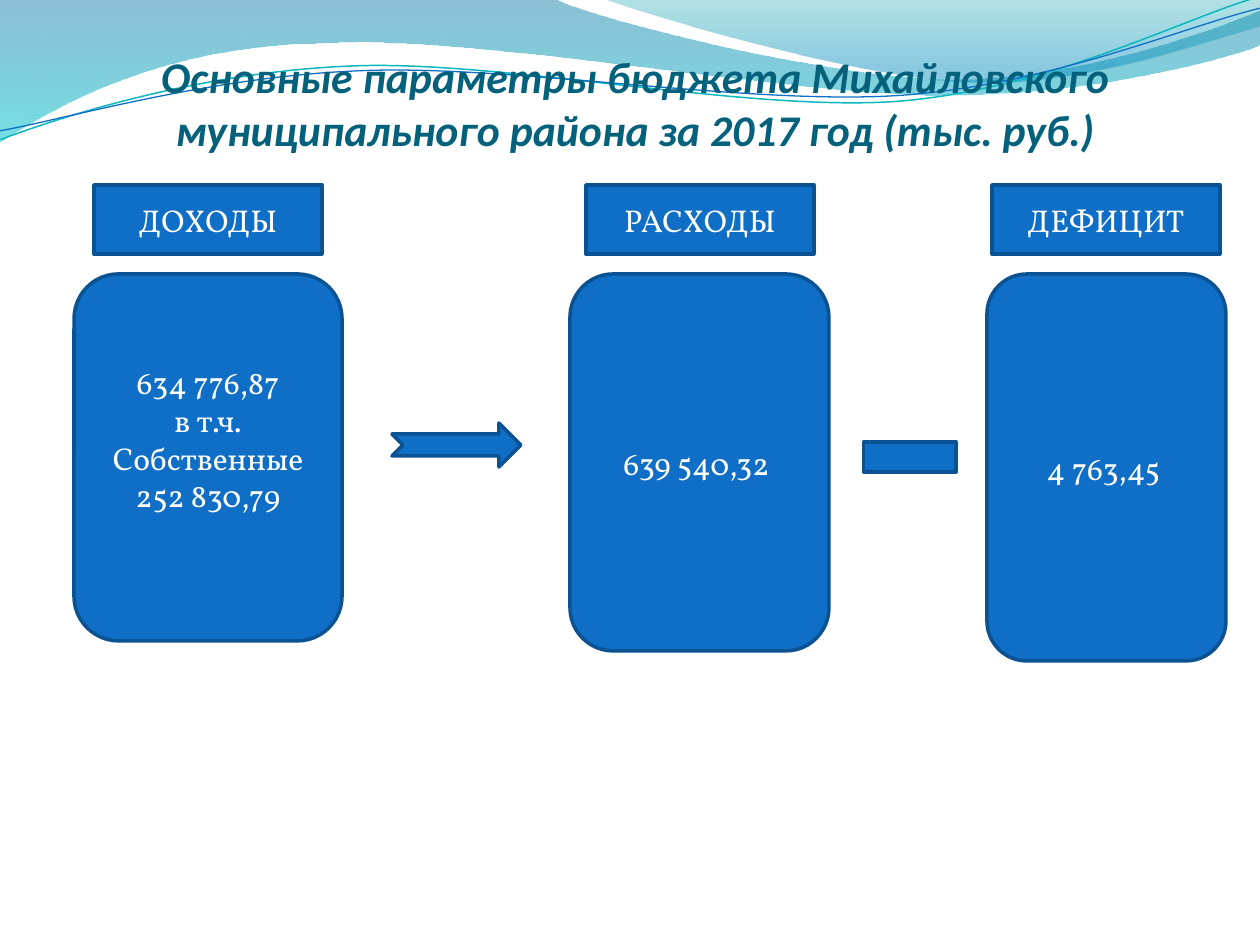
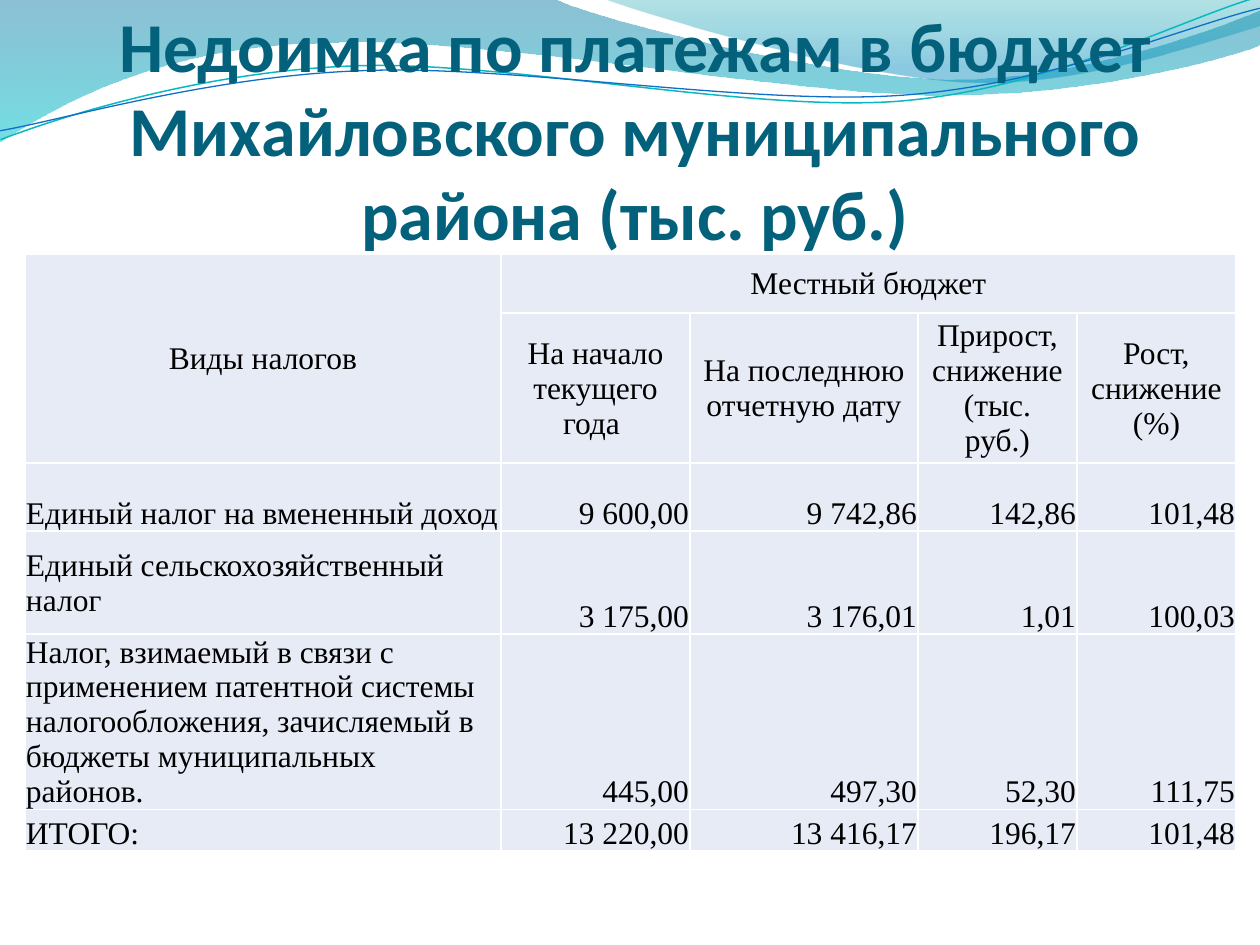
from lxml.etree import SubElement
from pptx import Presentation
from pptx.dml.color import RGBColor
from pptx.enum.shapes import MSO_SHAPE as Shape
from pptx.enum.text import MSO_ANCHOR as Anchor, MSO_AUTO_SIZE as AutoSize, PP_ALIGN as Align
from pptx.oxml import parse_xml
from pptx.oxml.ns import nsdecls, qn
from pptx.util import Inches, Pt

SCALE = Inches(1) / 126

BLUE = RGBColor(0x0F, 0x6F, 0xC6)
DARK_BLUE = RGBColor(0x0B, 0x52, 0x92)
TITLE_TEAL = RGBColor(0x04, 0x61, 0x7B)
TURQUOISE = RGBColor(0x0A, 0xB8, 0xBF)
CELL_FILL = RGBColor(0xE7, 0xEB, 0xF5)
WHITE = RGBColor(0xFF, 0xFF, 0xFF)
BLACK = RGBColor(0, 0, 0)

TITLE_FONT = "Calibri"
BODY_FONT = "Vollkorn"
TABLE_FONT = "Times New Roman"

# Pairs are straight steps, sixes are cubic curves: two control points and an end.
BANDS = [
    # outline, gradient stops (position, colour, opacity in percent)
    ([(0, 0), (554, -1), (600, 21, 837, 79, 955, 79), (1075, 79, 1207, 33, 1260, 11),
      (1261, 45), (1239, 55, 1096, 96, 940, 95), (784, 95, 481, 35, 324, 43),
      (163, 45, 58, 105, -1, 142)],
     [(0, RGBColor(0x00, 0x74, 0xA1), 45), (1, RGBColor(0x00, 0xC6, 0xCF), 55)]),
    ([(604, -1), (641, 14, 859, 78, 969, 82), (1079, 87, 1211, 40, 1260, 26), (1260, 0)],
     [(0, RGBColor(0x00, 0xA1, 0xA9), 30), (0.8, RGBColor(0x00, 0x8B, 0xBF), 45)]),
]
WAVE_ROTATION = 357.3
WAVE_LINES = [
    ([(-2, 110), (59, 90, 200, 52, 350, 53), (499, 53, 745, 118, 896, 114),
      (1049, 109, 1184, 45, 1260, 27)], TURQUOISE, 0.85),
    ([(-2, 101), (57, 94, 207, 57, 358, 58), (509, 58, 750, 112, 902, 108),
      (1052, 104, 1188, 52, 1262, 38)], BLUE, 0.75),
]

# heading, heading box, amount, amount box, space kept free under the amount
BUDGET_PARTS = [
    ("ДОХОДЫ", (94, 185, 228, 69), "634 776,87\nв т.ч. Собственные\n252 830,79",
     (74, 274, 268, 367), 44),
    ("РАСХОДЫ", (586, 185, 228, 69), "639 540,32 ", (570, 274, 259, 377), 6),
    ("ДЕФИЦИТ", (992, 185, 228, 69), "4 763,45 ", (987, 274, 239, 387), 6),
]

TABLE_HEIGHT = 614
COLUMN_WIDTHS = [476, 189, 228, 159, 159]
ROW_HEIGHTS = [59, 150, 68, 103, 68, 42]
COLUMN_HEADINGS = ["На начало текущего года ", "На последнюю отчетную дату",
                   "Прирост, снижение (тыс.\vруб.)", "Рост, снижение (%)"]
ARREARS = [
    # tax, its anchor, amounts
    ("Единый налог на вмененный доход", Anchor.BOTTOM,
     ("9 600,00", "9 742,86", "142,86", "101,48")),
    ("Единый сельскохозяйственный налог", Anchor.MIDDLE,
     ("3 175,00", "3 176,01", "1,01", "100,03")),
    ("Налог, взимаемый в связи с применением патентной системы налогообложения, "
     "зачисляемый в бюджеты муниципальных районов.", Anchor.MIDDLE,
     ("445,00", "497,30", "52,30", "111,75")),
    ("ИТОГО:", Anchor.BOTTOM, ("13 220,00", "13 416,17", "196,17", "101,48")),
]


def px(length):
    return round(length * SCALE)


def write_text(frame, text, *, size=18, font=BODY_FONT, color=WHITE, bold=False,
               italic=False, align=Align.CENTER, anchor=Anchor.MIDDLE):
    """Fill a frame with one paragraph per line of the text."""
    frame.word_wrap = True
    frame.vertical_anchor = anchor
    frame.text = text
    for paragraph in frame.paragraphs:
        paragraph.alignment = align
        for run in paragraph.runs:
            run.font.name = font
            run.font.size = Pt(size)
            run.font.bold = bold
            run.font.italic = italic
            run.font.color.rgb = color


def add_curve(slide, outline, close):
    """Draw the end points as a freeform, then bend its curved segments."""
    start, *segments = outline
    builder = slide.shapes.build_freeform(px(start[0]), px(start[1]))
    builder.add_line_segments([(px(s[-2]), px(s[-1])) for s in segments], close=close)
    shape = builder.convert_to_shape()
    shape.shadow.inherit = False
    steps = list(shape.element.iter(qn("a:lnTo")))
    for step, segment in zip(steps, segments):
        if len(segment) == 6:
            curve = parse_xml(f'<a:cubicBezTo {nsdecls("a")}/>')
            for x, y in zip(segment[::2], segment[1::2]):
                SubElement(curve, qn("a:pt"), x=str(px(x) - shape.left),
                           y=str(px(y) - shape.top))
            step.getparent().replace(step, curve)
    return shape


def add_band(slide, outline, stops):
    band = add_curve(slide, outline, close=True)
    band.line.fill.background()
    band.fill.gradient()
    band.fill.gradient_angle = 270
    for stop, (position, color, _) in zip(band.fill.gradient_stops, stops):
        stop.position = position
        stop.color.rgb = color
    for element, (_, _, opacity) in zip(band.element.iter(qn("a:srgbClr")), stops):
        SubElement(element, qn("a:alpha"), val=str(opacity * 1000))
    return band


def add_wave_line(slide, outline, color, width):
    line = add_curve(slide, outline, close=False)
    line.rotation = WAVE_ROTATION
    line.fill.background()
    line.line.color.rgb = color
    line.line.width = Pt(width)
    return line


def move_waves_to_layout(slide):
    """Draw the waves on a slide and hand them to its layout, behind the title."""
    waves = [add_band(slide, *band) for band in BANDS]
    waves += [add_wave_line(slide, *line) for line in WAVE_LINES]
    layout_title = slide.slide_layout.placeholders[0].element
    for number, wave in enumerate(waves, 20):
        wave.element.nvSpPr.cNvPr.set("id", str(number))
        layout_title.addprevious(wave.element)


def add_titled_slide(presentation, title_text, box, **text_format):
    slide = presentation.slides.add_slide(presentation.slide_layouts.get_by_name("Title Only"))
    title = slide.shapes.title
    title.left, title.top, title.width, title.height = map(px, box)
    frame = title.text_frame
    frame.auto_size = AutoSize.NONE
    frame.margin_left = frame.margin_right = frame.margin_bottom = 0
    frame.margin_top = px(6)
    write_text(frame, title_text, font=TITLE_FONT, color=TITLE_TEAL, bold=True,
               anchor=Anchor.BOTTOM, **text_format)
    return slide


def add_block(slide, kind, box, text="", bottom_margin=6):
    shape = slide.shapes.add_shape(kind, *map(px, box))
    shape.shadow.inherit = False
    shape.fill.solid()
    shape.fill.fore_color.rgb = BLUE
    shape.line.color.rgb = DARK_BLUE
    shape.line.width = Pt(2)
    if text:
        write_text(shape.text_frame, text)
        shape.text_frame.margin_bottom = px(bottom_margin)


def add_budget_slide(presentation):
    slide = add_titled_slide(
        presentation,
        "Основные параметры бюджета Михайловского муниципального района за 2017 год (тыс. руб.)",
        (63, 26, 1144, 129), size=25, italic=True)
    move_waves_to_layout(slide)
    for _, _, amount, amount_box, bottom_margin in BUDGET_PARTS:
        add_block(slide, Shape.ROUNDED_RECTANGLE, amount_box, amount, bottom_margin)
    for heading, heading_box, *_ in BUDGET_PARTS:
        add_block(slide, Shape.RECTANGLE, heading_box, heading)
    add_block(slide, Shape.NOTCHED_RIGHT_ARROW, (392, 423, 129, 44))
    add_block(slide, Shape.MATH_MINUS, (847, 394, 126, 126))


def format_cell(cell):
    cell.margin_left = cell.margin_right = cell.margin_top = px(1)
    cell.margin_bottom = 0
    cell.fill.solid()
    cell.fill.fore_color.rgb = CELL_FILL
    properties = cell._tc.get_or_add_tcPr()
    for index, side in enumerate(("lnL", "lnR", "lnT", "lnB")):
        properties.insert(index, parse_xml(
            f'<a:{side} {nsdecls("a")} w="{Pt(1)}"><a:solidFill>'
            f'<a:srgbClr val="{WHITE}"/></a:solidFill></a:{side}>'))


def add_arrears_table(slide, left, top):
    frame = slide.shapes.add_table(len(ROW_HEIGHTS), len(COLUMN_WIDTHS), px(left), px(top),
                                   px(sum(COLUMN_WIDTHS)), px(TABLE_HEIGHT))
    table = frame.table
    table.first_row = table.horz_banding = False
    for column, width in zip(table.columns, COLUMN_WIDTHS):
        column.width = px(width)
    for row, height in zip(table.rows, ROW_HEIGHTS):
        row.height = px(height)
    frame.height = px(TABLE_HEIGHT)
    for cell in table.iter_cells():
        format_cell(cell)
    table.cell(0, 0).merge(table.cell(1, 0))
    table.cell(0, 1).merge(table.cell(0, 4))

    def write_cell(row, column, text, align=Align.CENTER, anchor=Anchor.MIDDLE):
        cell = table.cell(row, column)
        write_text(cell.text_frame, text, font=TABLE_FONT, color=BLACK, align=align)
        cell.vertical_anchor = anchor

    write_cell(0, 0, "Виды налогов")
    write_cell(0, 1, "Местный бюджет")
    for column, heading in enumerate(COLUMN_HEADINGS, 1):
        write_cell(1, column, heading)
    for row, (tax, anchor, amounts) in enumerate(ARREARS, 2):
        write_cell(row, 0, tax, Align.LEFT, anchor)
        for column, amount in enumerate(amounts, 1):
            write_cell(row, column, amount, Align.RIGHT, Anchor.BOTTOM)


def add_arrears_slide(presentation):
    slide = add_titled_slide(
        presentation,
        "Недоимка по платежам в бюджет Михайловского муниципального района (тыс. руб.)",
        (63, 97, 1144, 158), size=40)
    add_arrears_table(slide, 25, 254)


def main():
    presentation = Presentation()
    presentation.slide_width = px(1260)
    presentation.slide_height = px(945)
    add_budget_slide(presentation)
    add_arrears_slide(presentation)
    presentation.save("out.pptx")


if __name__ == "__main__":
    main()
